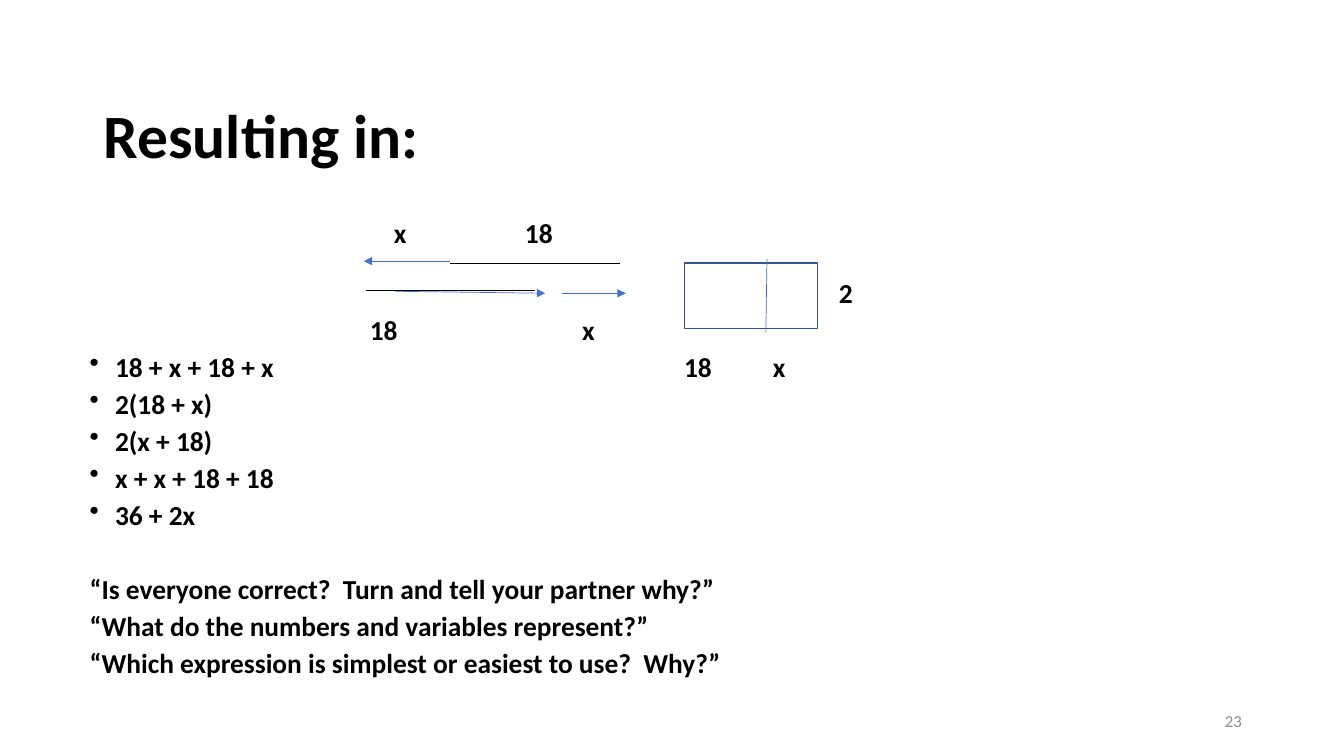
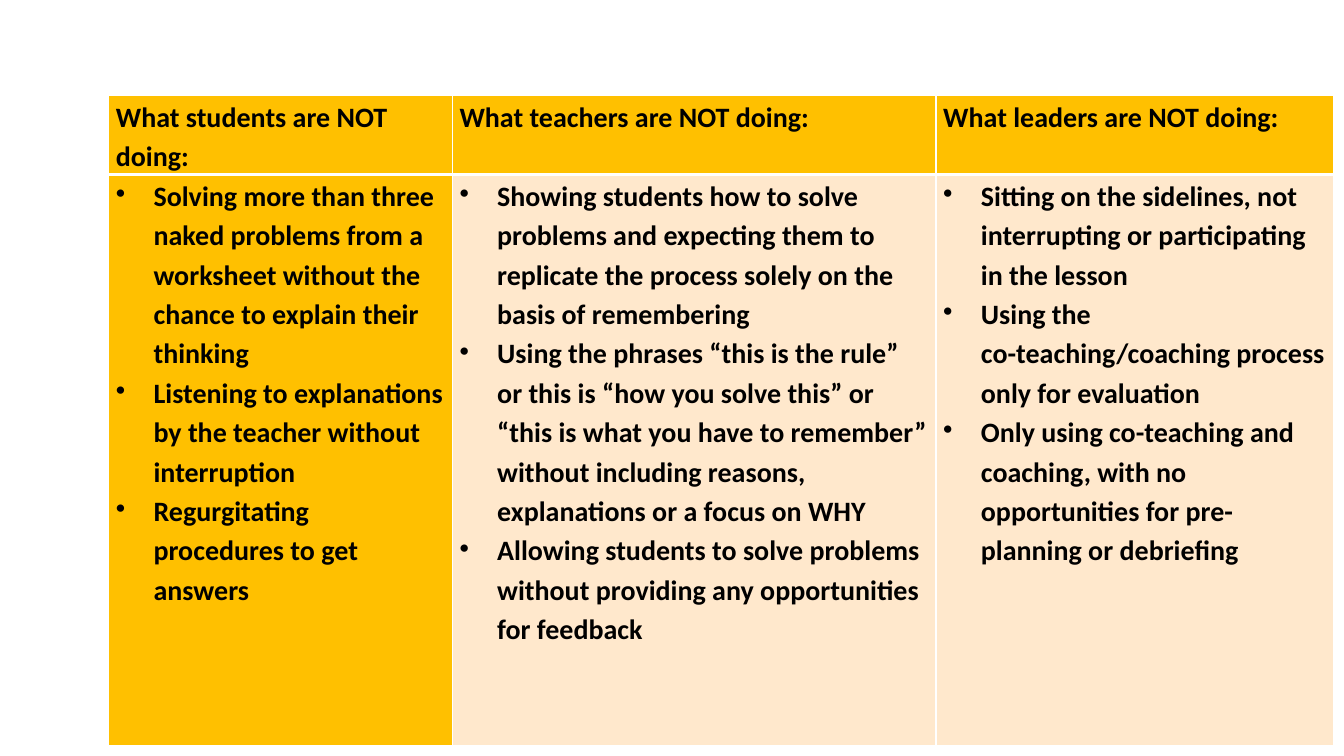
"""Build two lesson slides: equivalent expressions and practices to avoid."""
from dataclasses import dataclass

from lxml import etree
from pptx import Presentation
from pptx import util as u
from pptx.dml.color import RGBColor
from pptx.enum import shapes, text
from pptx.oxml import ns


@dataclass(frozen=True)
class Theme:
    font: str = "Calibri"
    ink: str = "000000"
    paper: str = "FFFFFF"
    blue: str = "4472C4"
    outline: str = "325491"
    gold: str = "FFC000"
    cream: str = "FFE8CC"
    grey: str = "8C8C8C"
    title: float = 44
    body: float = 19.6
    table: float = 20
    number: float = 12


theme = Theme()


def write(frame, lines, size, color=theme.ink, bold=True, spacing=1.0, before=0, bullet=0):
    frame.word_wrap = True
    frame.text = "\n".join(lines)
    for paragraph in frame.paragraphs:
        paragraph.line_spacing = spacing
        paragraph.space_before = u.Pt(before)
        if bullet:
            properties = paragraph._p.get_or_add_pPr()
            properties.set("marL", str(u.Cm(bullet)))
            properties.set("indent", str(-u.Cm(bullet)))
            etree.SubElement(properties, ns.qn("a:buChar"), char="•")
        for run in paragraph.runs:
            run.font.name = theme.font
            run.font.size = u.Pt(size)
            run.font.bold = bold
            run.font.color.rgb = RGBColor.from_string(color)


def border(cell, side, width):
    edge = etree.SubElement(cell._tc.get_or_add_tcPr(), ns.qn(f"a:ln{side}"), w=str(u.Pt(width)))
    fill = etree.SubElement(edge, ns.qn("a:solidFill"))
    etree.SubElement(fill, ns.qn("a:srgbClr"), val=theme.paper)


prs = Presentation()
prs.slide_width, prs.slide_height = u.Cm(33.87), u.Cm(19.05)
title_only, blank = prs.slide_layouts[5], prs.slide_layouts[6]

results = prs.slides.add_slide(title_only)
heading = results.shapes.title
heading.left, heading.top, heading.width, heading.height = map(u.Cm, (2.36, 2.16, 23.11, 2.64))
write(heading.text_frame, ["Resulting in:"], theme.title, spacing=0.9)
heading.text_frame.vertical_anchor = text.MSO_ANCHOR.MIDDLE
heading.text_frame.paragraphs[0].alignment = text.PP_ALIGN.LEFT

top_row, second_row, row_step = 5.56, 7.07, 0.93
third_row, fourth_row = second_row + row_step, second_row + 2 * row_step
question_row = second_row + 8 * row_step
expressions = ["18 + x + 18 + x", "2(18 + x)", "2(x + 18)", "x + x + 18 + 18", "36 + 2x"]
questions = [
    "“Is everyone correct?  Turn and tell your partner why?”",
    "“What do the numbers and variables represent?”",
    "“Which expression is simplest or easiest to use?  Why?”",
]
passages = [
    (["x"], 9.68, top_row, 2, 0),
    (["18"], 12.98, top_row, 2, 0),
    (["2"], 20.89, second_row, 2, 0),
    (["18"], 9.07, third_row, 2, 0),
    (["x"], 14.42, third_row, 2, 0),
    (["18"], 16.99, fourth_row, 2, 0),
    (["x"], 19.23, fourth_row, 2, 0),
    (expressions, 2.01, fourth_row, 7, 0.64),
    (questions, 2.01, question_row, 29, 0),
]
for lines, left, top, width, bullet in passages:
    passage = results.shapes.add_textbox(u.Cm(left), u.Cm(top), u.Cm(width), u.Cm(row_step * len(lines)))
    write(passage.text_frame, lines, theme.body, spacing=0.7, before=10, bullet=bullet)

area = results.shapes.add_shape(
    shapes.MSO_SHAPE.RECTANGLE, u.Cm(17.25), u.Cm(6.63), u.Cm(3.35), u.Cm(1.65))
area.shadow.inherit = False
area.fill.solid()
area.fill.fore_color.rgb = RGBColor.from_string(theme.paper)
area.line.color.rgb = RGBColor.from_string(theme.outline)
area.line.width = u.Pt(1)

segments = [
    ((9.96, 7.34, 13.74, 7.39), theme.blue, 0.5, True),
    ((14.17, 7.39, 15.77, 7.39), theme.blue, 0.5, True),
    ((11.35, 6.58, 9.17, 6.58), theme.blue, 0.5, True),
    ((19.33, 6.53, 19.3, 8.38), theme.blue, 0.5, False),
    ((11.35, 6.63, 15.62, 6.63), theme.ink, 0.75, False),
    ((9.22, 7.32, 13.49, 7.32), theme.ink, 0.75, False),
]
for ends, color, width, arrow in segments:
    segment = results.shapes.add_connector(shapes.MSO_CONNECTOR.STRAIGHT, *map(u.Cm, ends))
    segment.line.color.rgb = RGBColor.from_string(color)
    segment.line.width = u.Pt(width)
    if arrow:
        etree.SubElement(segment.line._get_or_add_ln(), ns.qn("a:tailEnd"), type="triangle")
    etree.SubElement(segment._element.spPr, ns.qn("a:effectLst"))

page_number = results.shapes.add_textbox(u.Cm(23.93), u.Cm(17.65), u.Cm(7.62), u.Cm(1.02))
write(page_number.text_frame, ["23"], theme.number, theme.grey, bold=False)
page_number.text_frame.vertical_anchor = text.MSO_ANCHOR.MIDDLE
page_number.text_frame.paragraphs[0].alignment = text.PP_ALIGN.RIGHT

avoidance = prs.slides.add_slide(blank)
roles = [
    ("What students are NOT doing:", 8.66, theme.gold, [
        "Solving more than three naked problems from a worksheet without the chance "
        "to explain their thinking",
        "Listening to explanations by the teacher without interruption",
        "Regurgitating procedures to get answers",
    ]),
    ("What teachers are NOT doing:", 12.19, theme.cream, [
        "Showing students how to solve problems and expecting them to replicate the process "
        "solely on the basis of remembering",
        "Using the phrases “this is the rule” or this is “how you solve this” or “this is what "
        "you have to remember” without including reasons, explanations or a focus on WHY",
        "Allowing students to solve problems without providing any opportunities for feedback",
    ]),
    ("What leaders are NOT doing:", 10.03, theme.cream, [
        "Sitting on the sidelines, not interrupting or participating in the lesson",
        "Using the co-teaching/coaching process only for evaluation",
        "Only using co-teaching and coaching, with no opportunities for pre-planning or debriefing",
    ]),
]
row_heights = (1.98, 14.4)
practices = avoidance.shapes.add_table(
    2, len(roles), u.Cm(2.74), u.Cm(2.41),
    u.Cm(sum(role[1] for role in roles)), u.Cm(sum(row_heights))).table
for row, height in zip(practices.rows, row_heights):
    row.height = u.Cm(height)

for column, (question, width, shade, habits) in enumerate(roles):
    practices.columns[column].width = u.Cm(width)
    entries = [([question], theme.gold, 0, (1, 1, 1, 3)), (habits, shade, 0.95, (1, 1, 3, 1))]
    for row, (lines, fill, bullet, edges) in enumerate(entries):
        cell = practices.cell(row, column)
        cell.margin_left = cell.margin_right = u.Cm(0.18)
        cell.margin_top = cell.margin_bottom = 0
        for side, edge in zip("LRTB", edges):
            border(cell, side, edge)
        cell.fill.solid()
        cell.fill.fore_color.rgb = RGBColor.from_string(fill)
        write(cell.text_frame, lines, theme.table, spacing=1.15, bullet=bullet)

prs.save("out.pptx")
